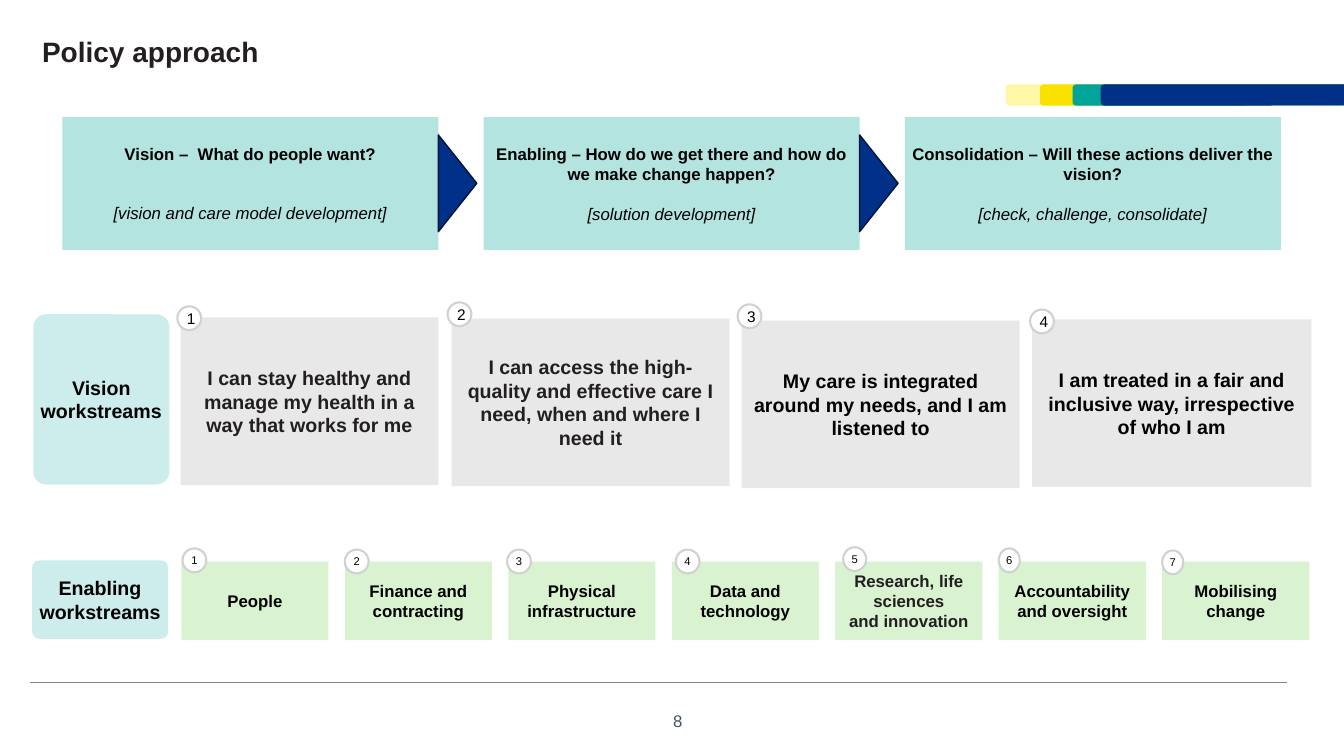
from lxml.etree import SubElement
from pptx import Presentation
from pptx.dml.color import RGBColor
from pptx.enum.shapes import MSO_CONNECTOR, MSO_SHAPE
from pptx.enum.text import MSO_ANCHOR, PP_ALIGN
from pptx.oxml.ns import qn
from pptx.util import Cm, Pt

BLACK = RGBColor(0x00, 0x00, 0x00)
INK = RGBColor(0x23, 0x1F, 0x20)
SLATE = RGBColor(0x42, 0x55, 0x63)
RULE = RGBColor(0x76, 0x86, 0x92)
WHITE = RGBColor(0xFF, 0xFF, 0xFF)
RING = RGBColor(0xD1, 0xD1, 0xD1)
CREAM = RGBColor(0xFF, 0xF7, 0xA7)
YELLOW = RGBColor(0xFA, 0xE1, 0x00)
TEAL = RGBColor(0x00, 0xA4, 0x99)
NAVY = RGBColor(0x00, 0x30, 0x87)
DARK = RGBColor(0x00, 0x15, 0x3B)
AQUA = RGBColor(0xB3, 0xE4, 0xE0)
PALE = RGBColor(0xCC, 0xED, 0xEB)
GREY = RGBColor(0xE8, 0xE8, 0xE8)
GREEN = RGBColor(0xD9, 0xF2, 0xD0)

# Heading, lines left free below it, note
PHASES = [
    ("Vision –  What do people want?", 2, "[vision and care model development]"),
    ("Enabling – How do we get there and how do we make change happen?", 1,
     "[solution development]"),
    ("Consolidation – Will these actions deliver the vision?", 1,
     "[check, challenge, consolidate]"),
]

# Text, colour, card left, top and width, badge offset and width
VISION = [
    (["I can stay healthy and manage my health in a way that works for me"],
     INK, 4.55, 8, 6.5, -0.08, -0.28, 0.6),
    (["I can access the high-quality and effective care I need, "
      "when and where I need it"], INK, 11.38, 8.03, 7.01, -0.1, -0.41, 0.6),
    (["My care is integrated around my needs, and I am listened to"],
     BLACK, 18.69, 8.08, 7.01, -0.1, -0.41, 0.6),
    (["I am treated in a fair and inclusive way, irrespective of who I am"],
     BLACK, 26.01, 8.05, 7.04, -0.05, -0.25, 0.6),
]

# Text, colour, badge offset and width
ENABLING = [
    (["People"], BLACK, 0.03, -0.33, 0.6),
    (["Finance and contracting"], BLACK, 0, -0.3, 0.6),
    (["Physical infrastructure"], BLACK, -0.03, -0.3, 0.6),
    (["Data and technology"], BLACK, 0.1, -0.3, 0.6),
    (["Research, life sciences", "and innovation"], INK, 0.2, -0.36, 0.58),
    (["Accountability and oversight"], BLACK, 0, -0.33, 0.53),
    (["Mobilising change"], BLACK, 0, -0.28, 0.53),
]


def add_run(para, text, size, color, bold=False, italic=False):
    run = para.add_run()
    run.text = text
    font = run.font
    font.name, font.size = "Arial", Pt(size)
    font.bold, font.italic = bold, italic
    font.color.rgb = color


def add_box(slide, kind, box, fill, line=None, weight=1):
    shape = slide.shapes.add_shape(kind, *map(Cm, box))
    shape.shadow.inherit = False
    shape.fill.solid()
    shape.fill.fore_color.rgb = fill
    if line is None:
        shape.line.fill.background()
    else:
        shape.line.color.rgb = line
        shape.line.width = Pt(weight)
    return shape


def set_frame(shape, side=0.25, edge=0.13):
    frame = shape.text_frame
    frame.word_wrap = True
    frame.vertical_anchor = MSO_ANCHOR.MIDDLE
    frame.margin_left = frame.margin_right = Cm(side)
    frame.margin_top = frame.margin_bottom = Cm(edge)
    return frame


def add_lines(frame, lines, size, color, bold=True):
    for i, text in enumerate(lines):
        para = frame.add_paragraph() if i else frame.paragraphs[0]
        para.alignment = PP_ALIGN.CENTER
        add_run(para, text, size, color, bold)


def add_frame(slide, box):
    """Title, colour strip, rule and page number."""
    left, top, width, height = box
    for x, color in [(25.35, CREAM), (26.21, YELLOW), (27.03, TEAL), (27.74, NAVY)]:
        add_box(slide, MSO_SHAPE.ROUNDED_RECTANGLE,
                (left + x, top + 2.13, 7.62, 0.53), color)

    title = slide.shapes.add_textbox(Cm(left + 0.81), Cm(top + 0.84), Cm(28.09), Cm(1.27))
    title.text_frame.word_wrap = True
    para = title.text_frame.paragraphs[0]
    para.line_spacing = 0.9
    add_run(para, "Policy approach", 20, INK, True)

    y = Cm(top + height - 1.85)
    rule = slide.shapes.add_connector(
        MSO_CONNECTOR.STRAIGHT, Cm(left + 0.76), y, Cm(left + width - 1.43), y)
    rule.line.color.rgb = RULE
    rule.line.width = Pt(0.5)
    SubElement(rule._element.spPr, qn("a:effectLst"))

    page = slide.shapes.add_textbox(
        Cm(left + 16.41), Cm(top + height - 1.27), Cm(1.04), Cm(0.76))
    para = page.text_frame.paragraphs[0]
    para.alignment = PP_ALIGN.RIGHT
    add_run(para, "8", 12, SLATE)


def add_phases(slide, box, gap=1.14):
    """Three phases in equal columns with an arrow in each gap."""
    left, top, width, height = box
    wide = (width - gap * (len(PHASES) - 1)) / len(PHASES)
    for i, (head, free, note) in enumerate(PHASES):
        x = left + i * (wide + gap)
        card = add_box(slide, MSO_SHAPE.RECTANGLE, (x, top, wide, height), AQUA)
        frame = set_frame(card, side=0)
        add_lines(frame, [head], 12, BLACK)
        para = frame.add_paragraph()
        para.alignment = PP_ALIGN.CENTER
        para.space_before = Pt(14 * free)
        add_run(para, note, 12, BLACK, italic=True)
        if i < len(PHASES) - 1:
            arrow = add_box(slide, MSO_SHAPE.RIGHT_ARROW,
                            (x + wide, top + 0.45, 0.97, height - 0.91), NAVY, DARK)
            arrow.adjustments[1] = 1


def add_label(slide, box, text):
    label = add_box(slide, MSO_SHAPE.ROUNDED_RECTANGLE, box, PALE)
    label.adjustments[0] = 0.095
    add_lines(set_frame(label, side=0), [text], 14, BLACK)


def add_card(slide, box, fill, lines, size, color):
    card = add_box(slide, MSO_SHAPE.RECTANGLE, box, fill)
    add_lines(set_frame(card), lines, size, color)


def add_badge(slide, box, number, size, shift=0):
    badge = add_box(slide, MSO_SHAPE.OVAL, box, WHITE, RING, 1.5)
    frame = set_frame(badge, side=0, edge=0)
    frame.word_wrap = False
    frame.margin_left = Cm(shift)
    add_lines(frame, [str(number)], size, BLACK, bold=False)


def add_vision(slide, box):
    """Label and four wide cards."""
    left, top, _, height = box
    add_label(slide, (left, top, 3.43, height), "Vision workstreams")
    for i, (lines, color, x, y, wide, dx, dy, ring) in enumerate(VISION, 1):
        x, y = left + x - 0.84, top + y - 7.92
        add_card(slide, (x, y, wide, 4.22), GREY, lines, 14, color)
        add_badge(slide, (x + dx, y + dy, ring, 0.6), i, 11, 0.1)


def add_enabling(slide, box, pitch=4.12):
    """Label and seven small cards at an even pitch."""
    left, top, _, height = box
    add_label(slide, (left, top, 3.43, height), "Enabling workstreams")
    for i, (lines, color, dx, dy, ring) in enumerate(ENABLING):
        x, y = left + 3.76 + i * pitch, top + 0.03
        add_card(slide, (x, y, 3.71, height), GREEN, lines, 12, color)
        add_badge(slide, (x + dx, y + dy, ring, 0.6), i + 1, 8)


def main():
    deck = Presentation()
    deck.slide_width, deck.slide_height = Cm(33.87), Cm(19.05)
    slide = deck.slides.add_slide(deck.slide_layouts[6])
    add_frame(slide, (0, 0, 33.87, 19.05))
    add_phases(slide, (1.57, 2.95, 30.71, 3.35))
    add_vision(slide, (0.84, 7.92, 32.2, 4.29))
    add_enabling(slide, (0.81, 14.12, 32.2, 1.98))
    deck.save("out.pptx")


if __name__ == "__main__":
    main()
